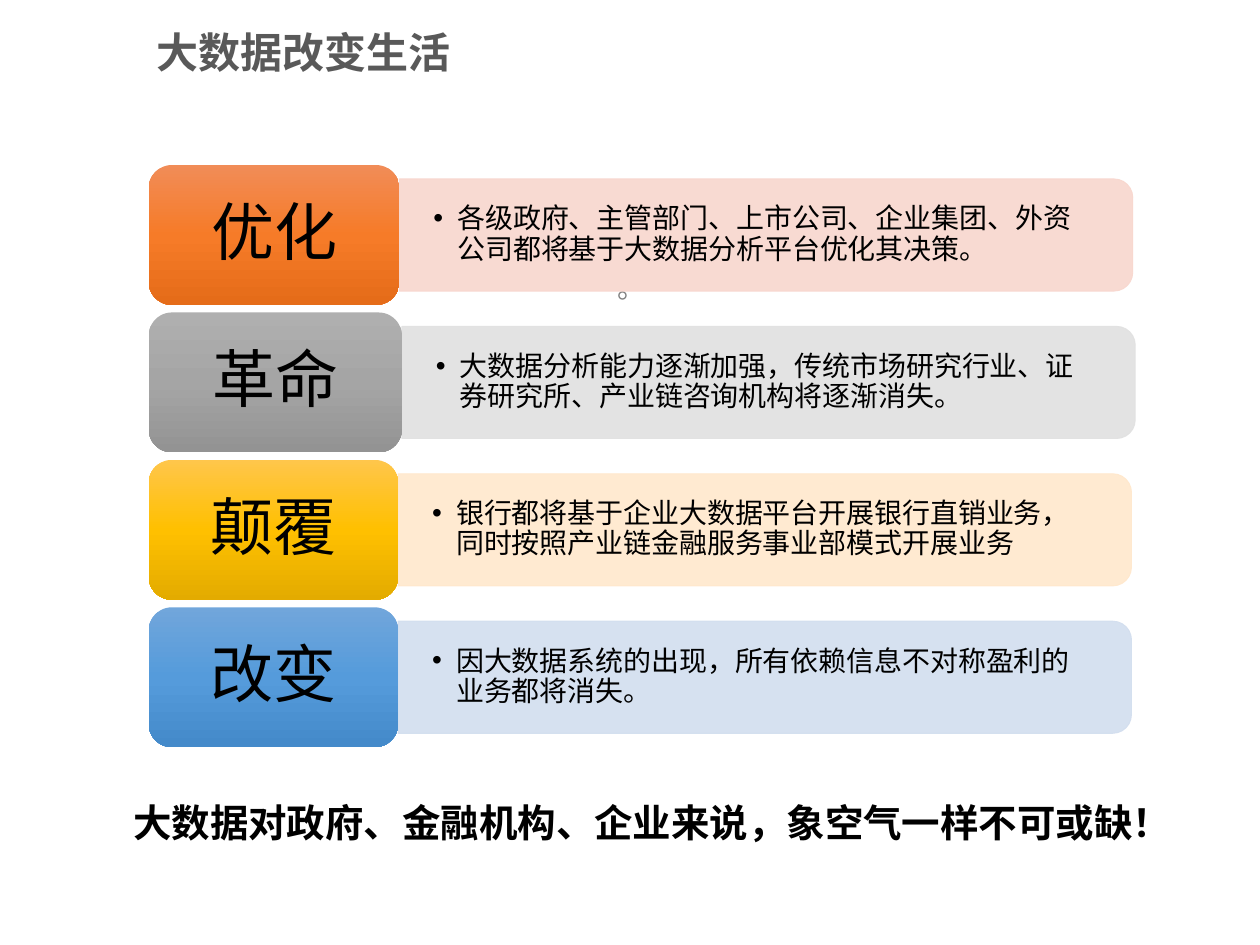
import pptx
import pptx.util
import pptx.dml.color
import pptx.enum.shapes
import pptx.enum.text
import pptx.oxml
import pptx.oxml.ns
from lxml import etree

Inches, Pt = pptx.util.Inches, pptx.util.Pt
RGB = pptx.dml.color.RGBColor
SHAPE = pptx.enum.shapes.MSO_SHAPE
ANCHOR = pptx.enum.text.MSO_ANCHOR
ALIGN = pptx.enum.text.PP_ALIGN
qn = pptx.oxml.ns.qn

FONT = "Noto Sans CJK SC"
BLACK = RGB(0, 0, 0)
GREY = RGB(0x59, 0x59, 0x59)
PALE = RGB(0x7F, 0x7F, 0x7F)

LEFT, TOP, STEP = 1.18, 1.31, 1.17
TALL = 1.11
BAR_W, BAR_H = 5.82, 0.89
NOTE_W, NOTE_H = 5.78, 0.8
TIGHT = 0.9

# label, label width, gradient stops, bar colour, note
ROWS = [
    ("优化", 1.99,
     (RGB(0xF1, 0x8C, 0x57), RGB(0xF6, 0x7B, 0x28), RGB(0xE5, 0x6C, 0x19)),
     RGB(0xF8, 0xD7, 0xCE),
     "各级政府、主管部门、上市公司、企业集团、外资公司都将基于大数据分析平台优化其决策。"),
    ("革命", 2.01,
     (RGB(0xAF, 0xAF, 0xAF), RGB(0xA5, 0xA5, 0xA5), RGB(0x93, 0x93, 0x93)),
     RGB(0xE1, 0xE1, 0xE1),
     "大数据分析能力逐渐加强，传统市场研究行业、证券研究所、产业链咨询机构将逐渐消失。"),
    ("颠覆", 1.98,
     (RGB(0xFF, 0xC6, 0x4B), RGB(0xFF, 0xC0, 0x00), RGB(0xE3, 0xAB, 0x00)),
     RGB(0xFF, 0xE8, 0xCC),
     "银行都将基于企业大数据平台开展银行直销业务，同时按照产业链金融服务事业部模式开展业务"),
    ("改变", 1.98,
     (RGB(0x71, 0xA6, 0xDB), RGB(0x55, 0x9B, 0xDB), RGB(0x44, 0x8A, 0xCA)),
     RGB(0xD2, 0xDE, 0xEF),
     "因大数据系统的出现，所有依赖信息不对称盈利的业务都将消失。"),
]


def write(frame, text, size, color, bold=False, inset=(0.1, 0.05)):
    """Fill a text frame with one paragraph and return the paragraph."""
    frame.word_wrap = True
    frame.margin_left = frame.margin_right = Inches(inset[0])
    frame.margin_top = frame.margin_bottom = Inches(inset[1])
    para = frame.paragraphs[0]
    run = para.add_run()
    run.text = text
    para.font.name = FONT
    para.font.size = Pt(size)
    para.font.bold = bold
    para.font.color.rgb = color
    # East Asian text takes its font from a:ea
    etree.SubElement(run.font._element, qn("a:ea"), typeface=FONT)
    return para


def add_text(slide, box, text, size, color, bold=False):
    area = slide.shapes.add_textbox(*map(Inches, box))
    return write(area.text_frame, text, size, color, bold)


def fade(shape, stops):
    """Give a shape an even gradient running from top to bottom."""
    shape.fill.gradient()
    shape.fill.gradient_angle = 270
    grad = shape._element.spPr.find(qn("a:gradFill"))
    items = grad.find(qn("a:gsLst"))
    for old in list(items):
        items.remove(old)
    for i, color in enumerate(stops):
        pos = str(100000 * i // (len(stops) - 1))
        stop = etree.SubElement(items, qn("a:gs"), pos=pos)
        etree.SubElement(stop, qn("a:srgbClr"), val=str(color))


def add_bar(slide, left, mid, color):
    """Add a bar rounded at its right end: a tall shape on its side."""
    bar = slide.shapes.add_shape(
        SHAPE.ROUND_2_SAME_RECTANGLE,
        Inches(left + BAR_W / 2 - BAR_H / 2), Inches(mid - BAR_W / 2),
        Inches(BAR_H), Inches(BAR_W))
    bar.rotation = 90
    bar.shadow.inherit = False
    bar.fill.solid()
    bar.fill.fore_color.rgb = color
    bar.line.color.rgb = color
    bar.line.width = Pt(0.5)
    for tint in bar._element.spPr.iter(qn("a:srgbClr")):
        etree.SubElement(tint, qn("a:alpha"), val="90000")


def add_note(slide, left, mid, text):
    area = slide.shapes.add_textbox(
        Inches(left), Inches(mid - NOTE_H / 2), Inches(NOTE_W), Inches(NOTE_H))
    frame = area.text_frame
    frame.vertical_anchor = ANCHOR.MIDDLE
    props = frame.paragraphs[0]._p.get_or_add_pPr()
    props.set("marL", str(Inches(0.19)))
    props.set("indent", str(-Inches(0.19)))
    etree.SubElement(props, qn("a:buFont"), typeface="Arial")
    etree.SubElement(props, qn("a:buChar"), char="•")
    para = write(frame, text, 16, BLACK, inset=(0.27, 0.14))
    para.line_spacing = TIGHT


def add_label(slide, top, width, stops, text):
    label = slide.shapes.add_shape(
        SHAPE.ROUNDED_RECTANGLE,
        Inches(LEFT), Inches(top), Inches(width), Inches(TALL))
    label.shadow.inherit = False
    fade(label, stops)
    label.line.fill.background()
    label.text_frame.vertical_anchor = ANCHOR.MIDDLE
    para = write(label.text_frame, text, 36, BLACK, inset=(0.2, 0.12))
    para.alignment = ALIGN.CENTER
    para.line_spacing = TIGHT


def main():
    deck = pptx.Presentation()
    deck.slide_width, deck.slide_height = Inches(10), Inches(7.5)
    slide = deck.slides.add_slide(deck.slide_layouts[6])

    title = add_text(slide, (1.14, 0.21, 8.25, 0.74),
                     "大数据改变生活", 24, GREY, True)
    title.line_spacing = TIGHT
    add_text(slide, (4.8, 2.1, 4.05, 4.44), "。", 16, PALE)

    for i, (name, width, stops, color, note) in enumerate(ROWS):
        top = TOP + i * STEP
        mid = top + TALL / 2
        add_bar(slide, LEFT + width, mid, color)
        add_note(slide, LEFT + width, mid, note)
        add_label(slide, top, width, stops, name)

    add_text(slide, (0.96, 6.29, 8.57, 0.47),
             "大数据对政府、金融机构、企业来说，象空气一样不可或缺！",
             22, BLACK, True)
    deck.save("out.pptx")


if __name__ == "__main__":
    main()
